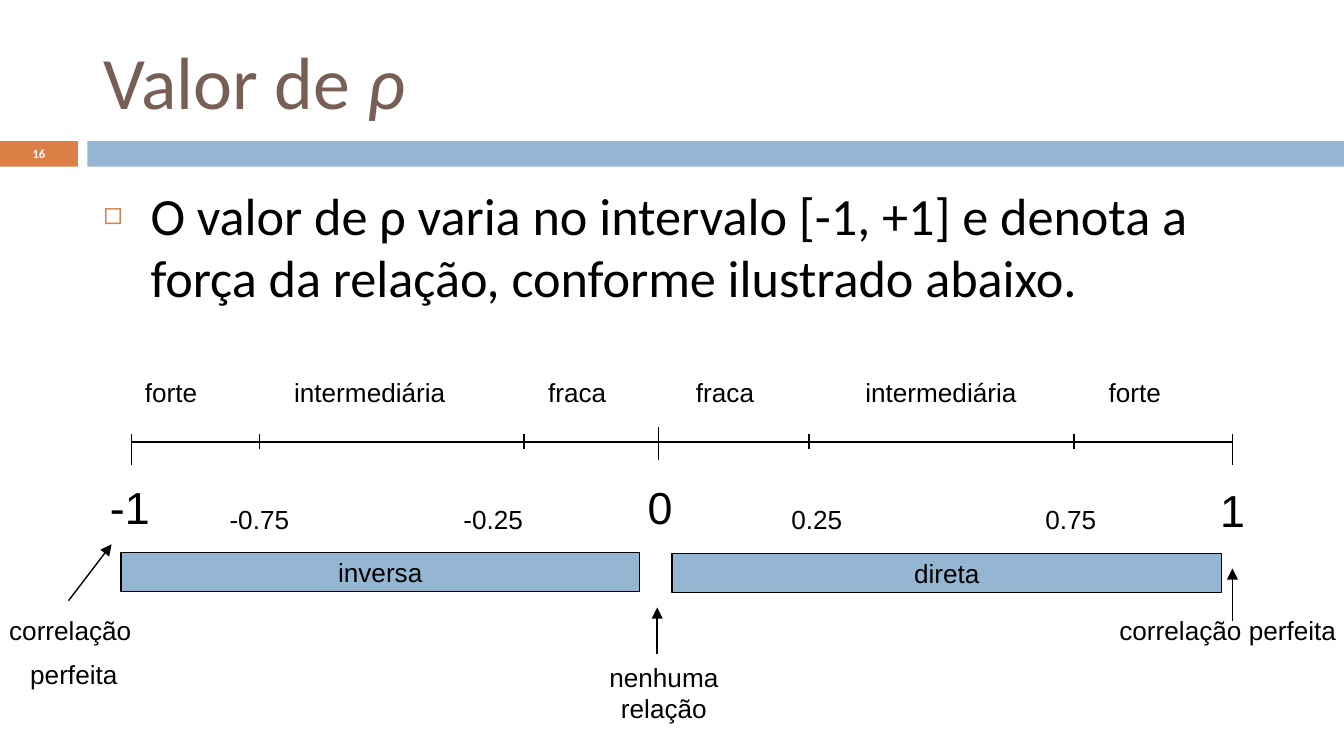
"""Build the slide on the range of the correlation coefficient ρ."""
from lxml import etree
from pptx import Presentation
from pptx.dml.color import RGBColor
from pptx.enum.shapes import MSO_CONNECTOR, MSO_SHAPE
from pptx.enum.text import MSO_ANCHOR, MSO_AUTO_SIZE, PP_ALIGN
from pptx.oxml.ns import qn
from pptx.util import Pt

PX = 9144
RECTANGLE = MSO_SHAPE.RECTANGLE
STRAIGHT = MSO_CONNECTOR.STRAIGHT
MIDDLE = MSO_ANCHOR.MIDDLE
LEFT, CENTER = PP_ALIGN.LEFT, PP_ALIGN.CENTER
NO_FIT = MSO_AUTO_SIZE.NONE

ORANGE = RGBColor(0xDD, 0x80, 0x47)
BLUE = RGBColor(0x94, 0xB6, 0xD2)
BROWN = RGBColor(0x77, 0x5F, 0x55)
BLACK = RGBColor(0, 0, 0)
WHITE = RGBColor(0xFF, 0xFF, 0xFF)


def write(shape, text, size, color=BLACK, font="Arial", align=LEFT):
    frame = shape.text_frame
    frame.text = text
    frame.word_wrap = True
    frame.auto_size = NO_FIT
    for para in frame.paragraphs:
        para.alignment = align
        for span in para.runs:
            span.font.name = font
            span.font.size = Pt(size)
            span.font.color.rgb = color
    return frame


def draw_line(x1, y1, x2, y2, arrow=False):
    line = page.shapes.add_connector(STRAIGHT, x1 * PX, y1 * PX, x2 * PX, y2 * PX)
    line.line.color.rgb = BLACK
    line.line.width = Pt(0.75)
    properties = line._element.spPr
    if arrow:
        etree.SubElement(properties.find(qn("a:ln")), qn("a:tailEnd"), type="triangle")
    etree.SubElement(properties, qn("a:effectLst"))


deck = Presentation()
deck.slide_width = 1000 * PX
deck.slide_height = deck.slide_width * 9 // 16
page = deck.slides.add_slide(deck.slide_layouts[1])

title, body = page.placeholders
title.left, title.top, title.width, title.height = 67 * PX, 19 * PX, 892 * PX, 81 * PX
body.left, body.top, body.width, body.height = 67 * PX, 131 * PX, 892 * PX, 369 * PX

frame = write(title, "Valor de ", 39.6, BROWN, "Calibri")
frame.vertical_anchor = MIDDLE
symbol = frame.paragraphs[0].add_run()
symbol.text = "ρ"
symbol.font.name = "Calibri"
symbol.font.size = Pt(39.6)
symbol.font.color.rgb = BROWN
symbol.font.italic = True

frame = write(
    body,
    "O valor de ρ varia no intervalo [-1, +1] e denota a força da relação, "
    "conforme ilustrado abaixo.",
    28, font="Calibri",
)
para = frame.paragraphs[0]
para.space_before = Pt(7)
properties = para._p.get_or_add_pPr()
properties.set("marL", str(35 * PX))
properties.set("indent", str(-35 * PX))
bullet_color = etree.SubElement(properties, qn("a:buClr"))
etree.SubElement(bullet_color, qn("a:srgbClr"), val=str(ORANGE))
etree.SubElement(properties, qn("a:buSzPct"), val="60000")
etree.SubElement(properties, qn("a:buFont"), typeface="Arial")
etree.SubElement(properties, qn("a:buChar"), char="◻")

bars = [
    (0, 105, 58, 19, ORANGE, ""),
    (65, 105, 935, 19, BLUE, ""),
    (500, 412, 409, 29, BLUE, "direta"),
    (90, 411, 386, 29, BLUE, "inversa"),
]
for left, top, width, height, color, text in bars:
    bar = page.shapes.add_shape(RECTANGLE, left * PX, top * PX, width * PX, height * PX)
    bar.shadow.inherit = False
    bar.fill.solid()
    bar.fill.fore_color.rgb = color
    if text:
        bar.line.color.rgb = BLACK
        bar.line.width = Pt(0.75)
        write(bar, text, 14, align=CENTER).vertical_anchor = MIDDLE
    else:
        bar.line.fill.background()

number = page.shapes.add_textbox(0, 104 * PX, 58 * PX, 20 * PX)
frame = write(number, "16", 6.7, WHITE, "Calibri", CENTER)
frame.vertical_anchor = MIDDLE
frame.paragraphs[0].runs[0].font.bold = True

draw_line(98, 329, 917, 329)
for x, top, bottom in [(98, 323, 346), (490, 318, 342), (917, 323, 346)]:
    draw_line(x, top, x, bottom)
for x in (193, 390, 602, 799):
    draw_line(x, 323, x, 334)
for x1, y1, x2, y2 in [(489, 487, 489, 452), (51, 447, 83, 405), (917, 462, 917, 423)]:
    draw_line(x1, y1, x2, y2, arrow=True)

labels = [
    ("-1", 72, 352, 50, 50, 24, LEFT),
    ("0", 472, 352, 39, 50, 24, LEFT),
    ("1", 898, 354, 39, 50, 24, LEFT),
    ("nenhuma relação", 419, 487, 150, 71, 14, CENTER),
    ("correlação \nperfeita", -4, 452, 118, 71, 14, CENTER),
    ("correlação perfeita", 823, 452, 189, 34, 14, LEFT),
]
for text, left in [("-0.75", 161), ("-0.25", 335), ("0.25", 579), ("0.75", 768)]:
    labels.append((text, left, 370, 87, 40, 14, LEFT))
for text, width, height, lefts in [
    ("forte", 94, 40, (98, 815)),
    ("intermediária", 173, 34, (209, 634)),
    ("fraca", 87, 34, (398, 508)),
]:
    for left in lefts:
        labels.append((text, left, 275, width, height, 14, LEFT))

for text, left, top, width, height, size, align in labels:
    box = page.shapes.add_textbox(left * PX, top * PX, width * PX, height * PX)
    frame = write(box, text, size, align=align)
    frame.word_wrap = size == 14
    for para in frame.paragraphs[1:]:
        para.space_before = Pt(7)

deck.save("out.pptx")
